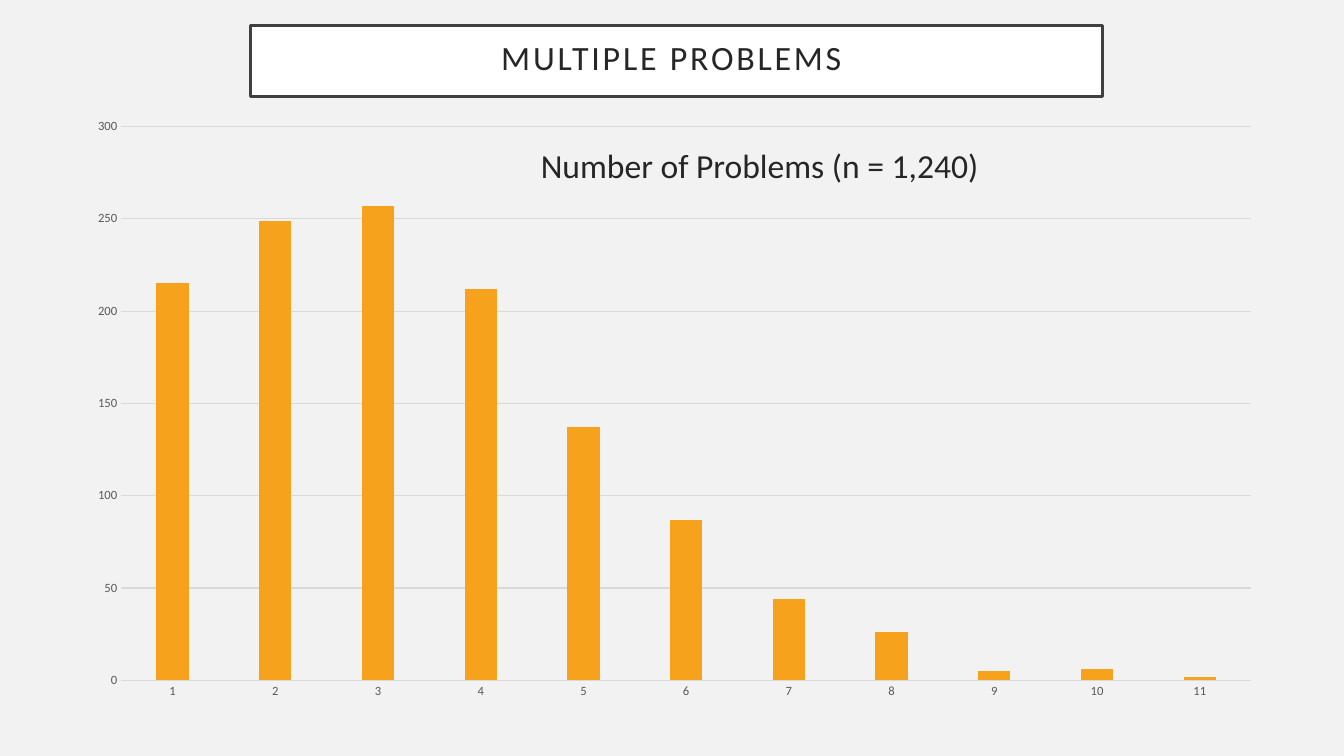
import pptx
import pptx.chart.data
import pptx.dml.color
import pptx.enum.chart
import pptx.enum.shapes
import pptx.enum.text
import pptx.oxml
import pptx.oxml.ns
import pptx.util
from pptx.util import Cm

FONT = "Calibri"
COLORS = {
    "background": "F2F2F2",
    "panel": "FFFFFF",
    "border": "404040",
    "text": "262626",
    "axis": "595959",
    "grid": "D9D9D9",
    "bar": "F6A21D",
}
PROBLEM_COUNTS = [215, 249, 257, 212, 137, 87, 44, 26, 5, 6, 2]
PLOT_LAYOUT = {"x": 0.035, "y": 0.023, "w": 0.954, "h": 0.922}


def color(name):
    return pptx.dml.color.RGBColor.from_string(COLORS[name])


def paint(fill, name):
    fill.solid()
    fill.fore_color.rgb = color(name)


def draw_line(line, name, width):
    line.color.rgb = color(name)
    line.width = pptx.util.Pt(width)


def style_font(font, size, name):
    font.name = FONT
    font.size = pptx.util.Pt(size)
    font.color.rgb = color(name)


def write_text(frame, text, *, size, align, spacing=0, right=0, bottom=0):
    frame.word_wrap = True
    frame.vertical_anchor = pptx.enum.text.MSO_ANCHOR.MIDDLE
    frame.margin_left = frame.margin_top = 0
    frame.margin_right = Cm(right)
    frame.margin_bottom = Cm(bottom)
    para = frame.paragraphs[0]
    para.alignment = align
    span = para.add_run()
    span.text = text
    style_font(span.font, size, "text")
    if spacing:
        span.font._element.set("spc", str(spacing * 100))


def add_title(page, text):
    box = page.shapes.add_shape(
        pptx.enum.shapes.MSO_SHAPE.RECTANGLE, Cm(6.32), Cm(0.64), Cm(21.46), Cm(1.8)
    )
    box.shadow.inherit = False
    paint(box.fill, "panel")
    draw_line(box.line, "border", 2.5)
    write_text(box.text_frame, text, size=24.3, spacing=2, right=0.25, bottom=0.2,
               align=pptx.enum.text.PP_ALIGN.CENTER)


def add_label(page, text):
    box = page.shapes.add_textbox(Cm(13.63), Cm(3.5), Cm(14.15), Cm(1.3))
    write_text(box.text_frame, text, size=24, align=pptx.enum.text.PP_ALIGN.LEFT)


def fix_plot_layout(chart):
    tags = "".join(f'<c:{key}Mode val="edge"/>' for key in "xy")
    tags += "".join(f'<c:{key} val="{value}"/>' for key, value in PLOT_LAYOUT.items())
    layout = pptx.oxml.parse_xml(
        f'<c:layout {pptx.oxml.ns.nsdecls("c")}><c:manualLayout>'
        f'<c:layoutTarget val="inner"/>{tags}</c:manualLayout></c:layout>'
    )
    area = chart._chartSpace.chart.plotArea
    for old in area.findall(pptx.oxml.ns.qn("c:layout")):
        area.remove(old)
    area.insert(0, layout)


def style_axis(axis):
    axis.major_tick_mark = axis.minor_tick_mark = pptx.enum.chart.XL_TICK_MARK.NONE
    style_font(axis.tick_labels.font, 9, "axis")


def add_column_chart(page, counts):
    data = pptx.chart.data.CategoryChartData()
    data.categories = [str(number) for number in range(1, len(counts) + 1)]
    data.add_series("Series 1", counts)
    chart = page.shapes.add_chart(
        pptx.enum.chart.XL_CHART_TYPE.COLUMN_CLUSTERED,
        Cm(2.01), Cm(2.84), Cm(29.85), Cm(15.14), data
    ).chart
    chart.has_title = False
    chart.has_legend = False
    style_font(chart.font, 10, "axis")
    fix_plot_layout(chart)

    plot = chart.plots[0]
    plot.vary_by_categories = False
    plot.gap_width = 219
    plot.overlap = -27
    paint(plot.series[0].format.fill, "bar")

    style_axis(chart.category_axis)
    draw_line(chart.category_axis.format.line, "grid", 0.75)
    values = chart.value_axis
    style_axis(values)
    values.minimum_scale = 0
    values.maximum_scale = 300
    values.major_unit = 50
    values.format.line.fill.background()
    draw_line(values.major_gridlines.format.line, "grid", 0.75)


def main():
    deck = pptx.Presentation()
    deck.slide_width = Cm(33.87)
    deck.slide_height = Cm(19.05)
    page = deck.slides.add_slide(deck.slide_layouts[6])
    paint(page.background.fill, "background")
    add_title(page, "MULTIPLE PROBLEMS")
    add_label(page, "Number of Problems (n = 1,240)")
    add_column_chart(page, PROBLEM_COUNTS)
    deck.save("out.pptx")


if __name__ == "__main__":
    main()
